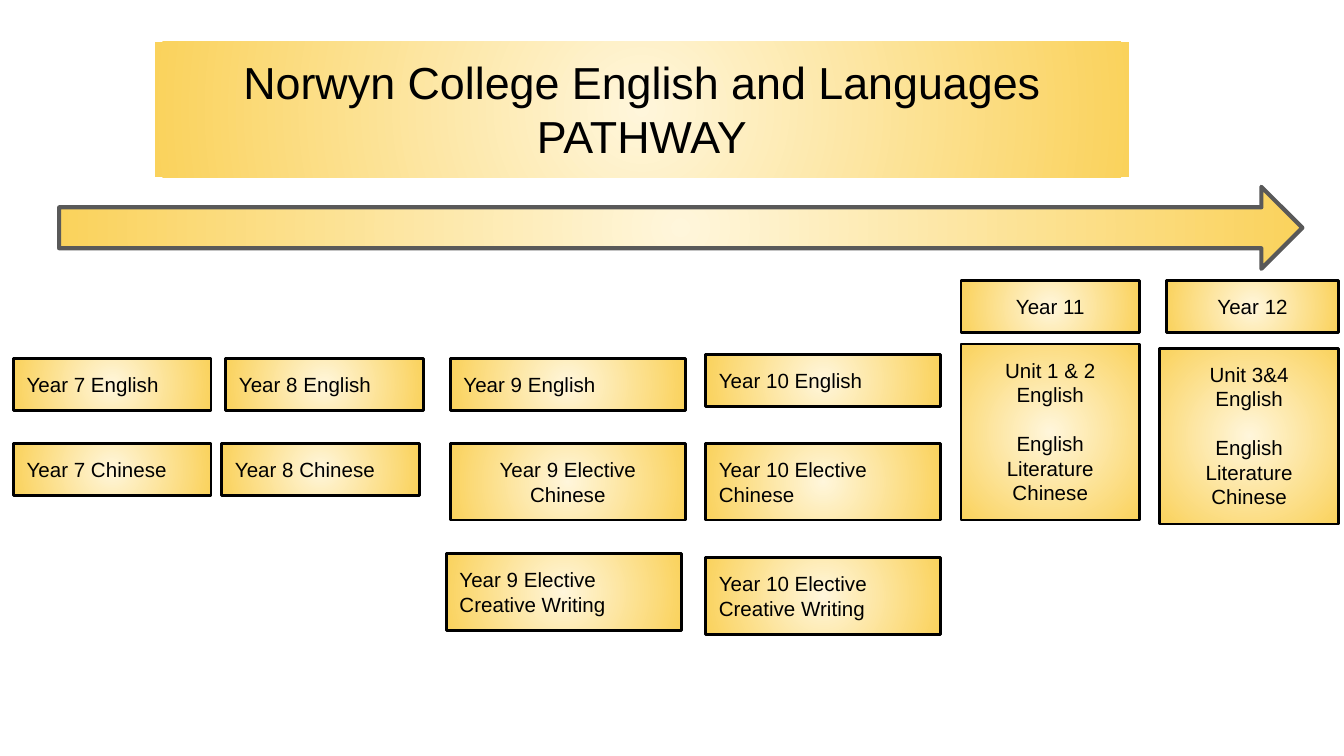
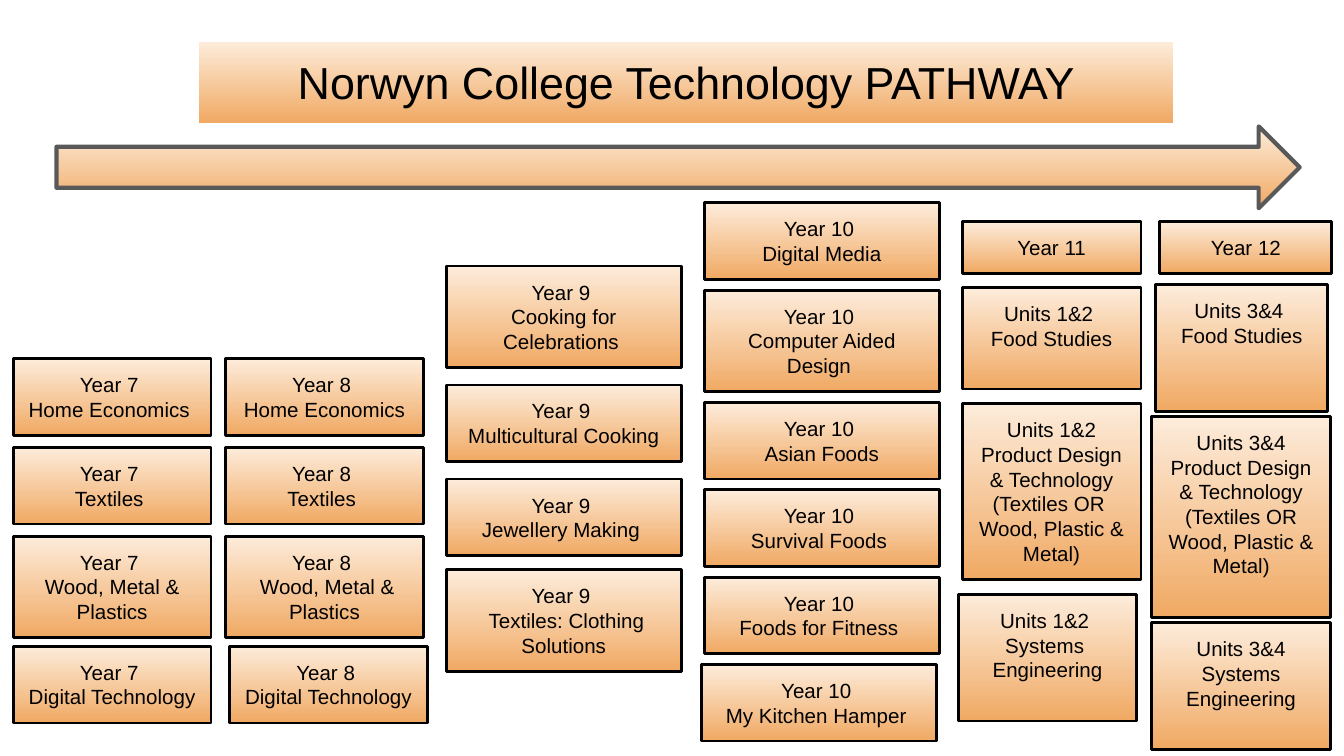
from dataclasses import dataclass
from typing import Optional

from lxml.etree import SubElement
from pptx import Presentation
from pptx.dml.color import RGBColor
from pptx.enum.shapes import MSO_SHAPE as Preset
from pptx.enum.text import MSO_ANCHOR as Anchor, PP_ALIGN as Align
from pptx.oxml.ns import qn
from pptx.shapes.autoshape import Shape
from pptx.slide import Slide
from pptx.util import Inches, Pt

WIDTH, HEIGHT = Inches(10), Inches(5.625)
COLUMN, ROW = WIDTH / 100, HEIGHT / 56.25
FONT = "Arial"
INK, ARROW_EDGE = "000000", "595959"
BODY_SIZE, TITLE_SIZE = 11, 24
PADDING = 1.0
BODY_LINE, TITLE_LINE = 1.85, 4.05
SECTION_SPACE = 13


@dataclass(frozen=True)
class Palette:
    light: str
    deep: str
    radial: bool = False


@dataclass(frozen=True)
class Box:
    left: float
    top: float
    width: float
    height: float


@dataclass(frozen=True)
class Course:
    lines: int
    text: tuple[str, ...]
    top: Optional[float] = None
    shift: float = 0
    align: Optional[Align] = None
    width: Optional[float] = None
    section_at: Optional[int] = None


@dataclass(frozen=True)
class Track:
    left: float
    width: float
    courses: tuple[Course, ...]
    heading: str = ""
    gap: float = 0.8
    align: Align = Align.CENTER


@dataclass(frozen=True)
class Pathway:
    title: str
    title_left: float
    title_lines: int
    arrow: Box
    palette: Palette
    tracks: tuple[Track, ...]


def colour(value: str) -> RGBColor:
    return RGBColor.from_string(value)


def height_for(lines: int, line_height: float = BODY_LINE) -> float:
    return 2 * PADDING + lines * line_height


def paint(shape: Shape, palette: Palette) -> None:
    shape.fill.gradient()
    for stop, value in zip(shape.fill.gradient_stops, (palette.light, palette.deep)):
        stop.color.rgb = colour(value)
    if not palette.radial:
        shape.fill.gradient_angle = 270
        return
    gradient = shape._element.spPr.find(qn("a:gradFill"))
    gradient.remove(gradient.find(qn("a:lin")))
    focus = SubElement(gradient, qn("a:path"), {"path": "circle"})
    SubElement(focus, qn("a:fillToRect"), dict.fromkeys("ltrb", "50000"))


def add_panel(slide: Slide, preset: Preset, box: Box, palette: Palette,
              edge: Optional[str] = None, edge_width: float = 1.5) -> Shape:
    panel = slide.shapes.add_shape(
        preset, round(box.left * COLUMN), round(box.top * ROW),
        round(box.width * COLUMN), round(box.height * ROW))
    panel.shadow.inherit = False
    paint(panel, palette)
    if edge:
        panel.line.color.rgb = colour(edge)
        panel.line.width = Pt(edge_width)
    else:
        panel.line.fill.background()
    return panel


def write(panel: Shape, paragraphs: tuple[str, ...], size: float,
          align: Align, section_at: Optional[int] = None) -> None:
    frame = panel.text_frame
    frame.word_wrap = True
    frame.vertical_anchor = Anchor.TOP
    frame.margin_left = frame.margin_right = round(PADDING * COLUMN)
    frame.margin_top = frame.margin_bottom = round(PADDING * ROW)
    for index, words in enumerate(paragraphs):
        paragraph = frame.add_paragraph() if index else frame.paragraphs[0]
        paragraph.alignment = align
        if index == section_at:
            paragraph.space_before = Pt(SECTION_SPACE)
        run = paragraph.add_run()
        run.text = words
        run.font.name = FONT
        run.font.size = Pt(size)
        run.font.color.rgb = colour(INK)


def draw_track(slide: Slide, track: Track, palette: Palette) -> None:
    next_top = 0.0
    for course in track.courses:
        top = next_top if course.top is None else course.top
        box = Box(track.left + course.shift, top,
                  course.width or track.width, height_for(course.lines))
        panel = add_panel(slide, Preset.RECTANGLE, box, palette, INK)
        text = (track.heading, *course.text) if track.heading else course.text
        write(panel, text, BODY_SIZE, course.align or track.align, course.section_at)
        next_top = top + box.height + track.gap


def draw_pathway(slide: Slide, pathway: Pathway) -> None:
    banner = Box(pathway.title_left, 3.1, 72.5,
                 height_for(pathway.title_lines, TITLE_LINE))
    panel = add_panel(slide, Preset.RECTANGLE, banner, pathway.palette)
    write(panel, (pathway.title,), TITLE_SIZE, Align.CENTER)
    add_panel(slide, Preset.RIGHT_ARROW, pathway.arrow, pathway.palette, ARROW_EDGE, 2.25)
    for track in pathway.tracks:
        draw_track(slide, track, pathway.palette)


def senior_year(year: str, top: float, shift: float = 0,
                width: Optional[float] = None) -> Course:
    return Course(1, (year,), top, shift, width=width)


def senior_english(units: str, top: float) -> Course:
    return Course(6, (units, "English", "English Literature", "Chinese"), top, section_at=2)


LANGUAGES = Pathway(
    "Norwyn College English and Languages PATHWAY", 11.5, 2,
    Box(4.4, 13.9, 92.5, 6.1), Palette("FFF6DB", "FAD25C", radial=True),
    (
        Track(1, 14.7, (
            Course(1, ("Year 7 English",), 26.7),
            Course(1, ("Year 7 Chinese",), 33),
        ), align=Align.LEFT),
        Track(16.8, 14.7, (
            Course(1, ("Year 8 English",), 26.7),
            Course(1, ("Year 8 Chinese",), 33, -0.3),
        ), align=Align.LEFT),
        Track(33.5, 17.5, (
            Course(1, ("Year 9 English",), 26.7),
            Course(2, ("Year 9 Elective Chinese",), 33, align=Align.CENTER),
            Course(2, ("Year 9 Elective", "Creative Writing"), 41.2, -0.3),
        ), align=Align.LEFT),
        Track(52.5, 17.5, (
            Course(1, ("Year 10 English",), 26.4),
            Course(2, ("Year 10 Elective", "Chinese"), 33),
            Course(2, ("Year 10 Elective", "Creative Writing"), 41.5),
        ), align=Align.LEFT),
        Track(71.5, 13.3, (
            senior_year("Year 11", 20.9),
            senior_english("Unit 1 & 2", 25.6),
        )),
        Track(86.3, 13.3, (
            senior_year("Year 12", 20.9, 0.5, 12.8),
            senior_english("Unit 3&4", 25.9),
        )),
    ),
)

TECHNOLOGY = Pathway(
    "Norwyn College Technology PATHWAY", 14.8, 1,
    Box(4.2, 9.4, 92.5, 6.1), Palette("FDECDB", "F0A963"),
    (
        Track(1, 14.7, (
            Course(2, ("Home Economics ",), 26.7),
            Course(2, ("Textiles ",)),
            Course(3, ("Wood, Metal & Plastics",)),
            Course(2, ("Digital Technology",), 48.1),
        ), "Year 7 ", 0.9),
        Track(16.8, 14.7, (
            Course(2, ("Home Economics",), 26.7),
            Course(2, ("Textiles ",)),
            Course(3, (" Wood, Metal & Plastics",)),
            Course(2, ("Digital Technology",), 48.1, 0.3),
        ), "Year 8 ", 0.9),
        Track(33.2, 17.5, (
            Course(3, ("Cooking for Celebrations ",), 19.8),
            Course(2, ("Multicultural Cooking",)),
            Course(2, ("Jewellery Making ",)),
            Course(3, (" Textiles: Clothing Solutions",), 42.4),
        ), "Year 9 ", 1.3),
        Track(52.4, 17.5, (
            Course(2, ("Digital Media",), 15.1),
            Course(3, ("Computer Aided Design ",)),
            Course(2, ("Asian Foods",)),
            Course(2, ("Survival Foods ",)),
            Course(2, ("Foods for Fitness ",)),
            Course(2, ("My Kitchen Hamper ",), shift=-0.2),
        ), "Year 10 "),
        Track(71.6, 13.3, (
            senior_year("Year 11", 16.5),
            Course(3, ("Units 1&2 ", "Food Studies"), 21.4),
            Course(6, ("Units 1&2 Product Design & Technology (Textiles OR ",
                       "Wood, Plastic & Metal)")),
            Course(4, ("Units 1&2 ", "Systems ", "Engineering"), shift=-0.3),
        ), gap=1.1),
        Track(85.7, 13.3, (
            senior_year("Year 12", 16.5, 0.6, 12.8),
            Course(4, ("Units 3&4 ", "Food Studies"), 21.2, 0.3, width=12.8),
            Course(7, ("Units 3&4",
                       "Product Design & Technology (Textiles OR Wood, Plastic & Metal)")),
            Course(4, ("Units 3&4", "Systems", "Engineering")),
        ), gap=0.4),
    ),
)


def main() -> None:
    deck = Presentation()
    deck.slide_width, deck.slide_height = WIDTH, HEIGHT
    blank = deck.slide_layouts[6]
    for pathway in (LANGUAGES, TECHNOLOGY):
        draw_pathway(deck.slides.add_slide(blank), pathway)
    deck.save("out.pptx")


if __name__ == "__main__":
    main()
